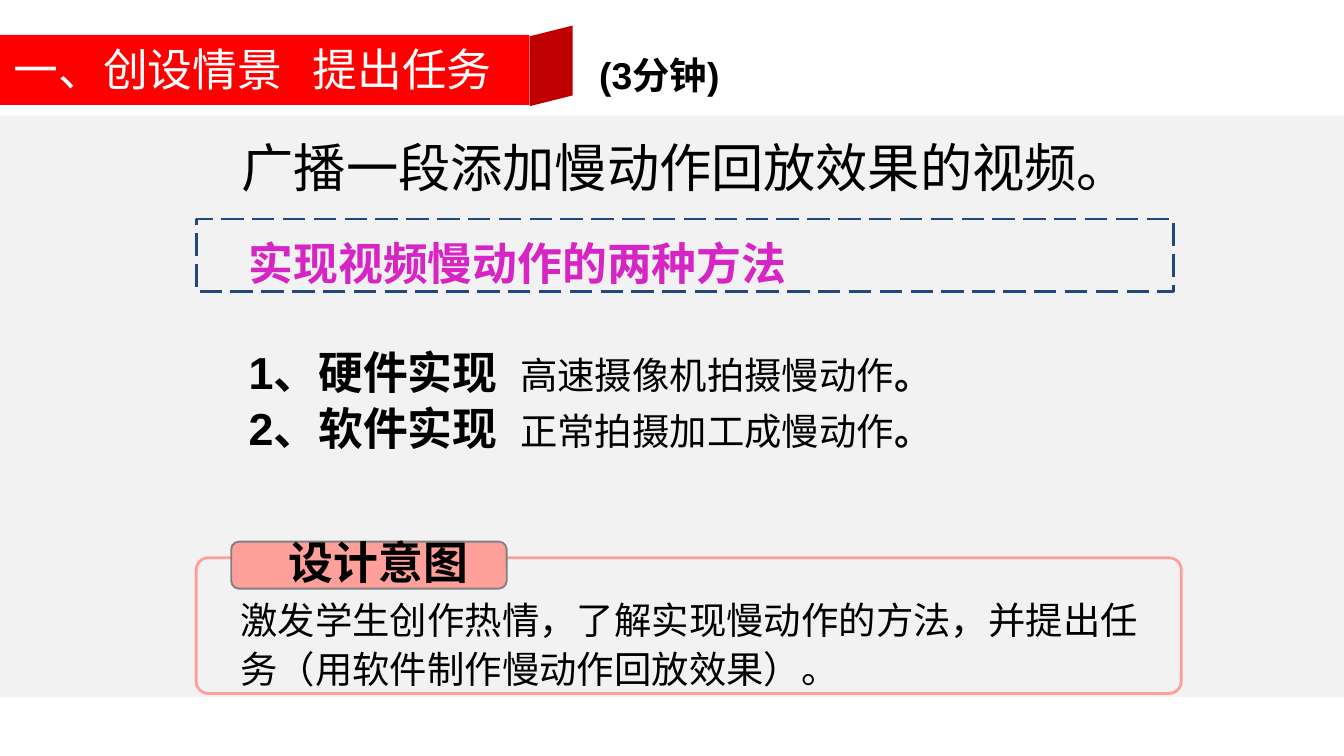
from pptx import Presentation
from pptx.dml.color import RGBColor
from pptx.enum.dml import MSO_LINE
from pptx.enum.shapes import MSO_SHAPE
from pptx.enum.text import MSO_ANCHOR, MSO_AUTO_SIZE, PP_ALIGN
from pptx.oxml.ns import qn
from pptx.util import Inches, Pt
from lxml import etree

RED = RGBColor(0xFF, 0x00, 0x00)
DARK = RGBColor(0xC0, 0x00, 0x00)
GREY = RGBColor(0xF2, 0xF2, 0xF2)
EDGE = RGBColor(0x80, 0x80, 0x80)
NAVY = RGBColor(0x1F, 0x49, 0x7D)
PINK = RGBColor(0xFF, 0x9F, 0x99)
MAUVE = RGBColor(0xD6, 0x24, 0xC5)
BLACK = RGBColor(0, 0, 0)
WHITE = RGBColor(0xFF, 0xFF, 0xFF)
NOTO = "Noto Sans CJK SC"

# A 16:9 slide
prs = Presentation()
prs.slide_width, prs.slide_height = Inches(10), Inches(10 * 9 / 16)
slide = prs.slides.add_slide(prs.slide_layouts[1])
shapes = slide.shapes
title, body = slide.placeholders


def draw(kind, box, fill=None, line=None, width=1.5):
    shape = shapes.add_shape(kind, *map(Inches, box))
    shape.shadow.inherit = False
    if fill is None:
        shape.fill.background()
    else:
        shape.fill.solid()
        shape.fill.fore_color.rgb = fill
    if line is None:
        shape.line.fill.background()
    else:
        shape.line.color.rgb = line
        shape.line.width = Pt(width)
    return shape


def style(run, size, font=NOTO, color=BLACK, bold=False, spread=0):
    run.font.size = Pt(size)
    run.font.name = font
    run.font.color.rgb = color
    run.font.bold = bold
    east = etree.Element(qn("a:ea"), typeface=NOTO)
    run.font._element.find(qn("a:latin")).addnext(east)
    if spread:
        run.font._element.set("spc", str(int(spread * 100)))


# Grey band and ribbon
draw(MSO_SHAPE.RECTANGLE, (0, 0.86, 10, 4.33), GREY)
draw(MSO_SHAPE.RECTANGLE, (0, 0.26, 3.94, 0.52), RED)
fold = draw(MSO_SHAPE.PARALLELOGRAM, (3.8, 0.33, 0.6, 0.32), DARK)
fold.rotation = 90
fold._element.spPr.find(qn("a:xfrm")).set("flipH", "1")

# Dashed frame
frame = draw(MSO_SHAPE.RECTANGLE, (1.46, 1.63, 7.27, 0.54), line=NAVY)
frame.line.dash_style = MSO_LINE.LONG_DASH

# Intent panel and its tab
panel = draw(MSO_SHAPE.ROUNDED_RECTANGLE, (1.46, 4.15, 7.33, 1.01), GREY, PINK)
panel.adjustments[0] = 0.09
draw(MSO_SHAPE.ROUNDED_RECTANGLE, (1.72, 4.03, 2.05, 0.35), PINK, EDGE, 1)

# Single texts: box, words, size, font, bold, line spacing, alignment
texts = [
    ((4.36, 0.49, 4.13, 0.47), "(3分钟)", 20, "Arial", True, 13, PP_ALIGN.LEFT),
    ((1.69, 4.37, 7.15, 0.83),
     "激发学生创作热情，了解实现慢动作的方法，并提出任务（用软件制作慢动作回放效果）。",
     20, NOTO, False, 26, PP_ALIGN.LEFT),
    ((1.7, 3.93, 2.23, 0.5), "设计意图", 24, NOTO, True, None, PP_ALIGN.CENTER),
    ((1.7, 0.96, 6.82, 0.57), "广播一段添加慢动作回放效果的视频。",
     28, NOTO, False, None, PP_ALIGN.LEFT),
]
for box, words, size, font, bold, lead, align in texts:
    text = shapes.add_textbox(*map(Inches, box)).text_frame
    text.word_wrap = True
    text.text = words
    para = text.paragraphs[0]
    para.alignment = align
    if lead:
        para.line_spacing = Pt(lead)
    style(para.runs[0], size, font, bold=bold)

# Title and list, raised above the band
for holder, box in ((title, (0, 0.26, 3.87, 0.5)), (body, (1.75, 1.7, 6.54, 1.76))):
    holder.left, holder.top, holder.width, holder.height = map(Inches, box)
    shapes._spTree.append(holder._element)
    holder.text_frame.auto_size = MSO_AUTO_SIZE.NONE
    holder.text_frame.vertical_anchor = MSO_ANCHOR.TOP
title.text_frame.word_wrap = False

# Each line: frame, line spacing, space before, runs; a spread space makes a gap
lines = [
    (title, None, 0, [("一、创设情景", 24, NOTO, WHITE),
                      (" ", 24, NOTO, WHITE, False, 10.8),
                      ("提出任务", 24, NOTO, WHITE)]),
    (body, 28.8, 0, [("实现视频慢动作的两种方法", 24, "Calibri", MAUVE, True)]),
]
items = [("1、硬件实现", "高速摄像机拍摄慢动作", 28.8), ("2、软件实现", "正常拍摄加工成慢动作", 0)]
for name, how, gap in items:
    lines.append((body, 30, gap, [(name, 24, "Arial", BLACK, True),
                                  (" ", 24, "Arial", BLACK, True, 6.7),
                                  (how, 20, "Calibri"),
                                  ("。", 20, "Arial", BLACK, True)]))
for holder, lead, gap, parts in lines:
    para = holder.text_frame.paragraphs[-1]
    if para.runs:
        para = holder.text_frame.add_paragraph()
    para.alignment = PP_ALIGN.LEFT
    para.space_before = Pt(gap)
    if lead:
        para.line_spacing = Pt(lead)
    props = para._p.get_or_add_pPr()
    props.set("marL", "0")
    props.set("indent", "0")
    etree.SubElement(props, qn("a:buNone"))
    for words, *look in parts:
        run = para.add_run()
        run.text = words
        style(run, *look)

prs.save("out.pptx")
